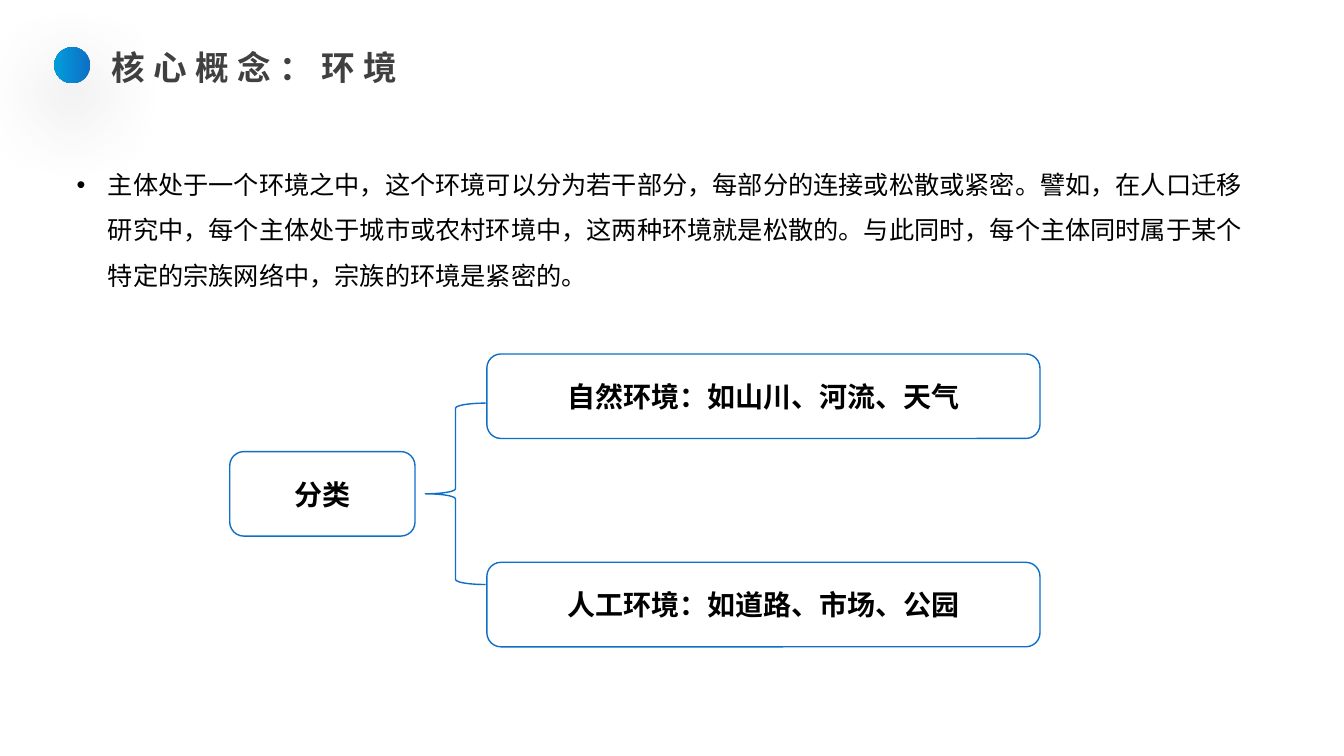
from lxml.etree import SubElement
from pptx import Presentation
from pptx.dml.color import RGBColor
from pptx.enum.shapes import MSO_SHAPE
from pptx.enum.text import MSO_ANCHOR, PP_ALIGN
from pptx.oxml.ns import qn
from pptx.util import Cm, Pt

FONT = "Noto Sans CJK SC"
BLUE = RGBColor(0x0F, 0x6F, 0xC6)
CYAN = RGBColor(0x00, 0x9D, 0xD9)
GREY = RGBColor(0x40, 0x40, 0x40)
BLACK = RGBColor(0, 0, 0)


def write(sp, text, size, color=BLACK, bold=False, align=None, anchor=None, spacing=None):
    """Put one formatted paragraph into a shape; spacing is between letters, in points."""
    tf = sp.text_frame
    tf.word_wrap = True
    tf.vertical_anchor = anchor
    p = tf.paragraphs[0]
    p.alignment = align
    r = p.add_run()
    r.text = text
    r.font.size = Pt(size)
    r.font.bold = bold
    r.font.color.rgb = color
    r.font.name = FONT
    rPr = r.font._element
    SubElement(rPr, qn("a:ea"), typeface=FONT)
    if spacing:
        rPr.set("spc", str(spacing * 100))
    return p


def add_outline(s, kind, left, top, width, height):
    """Add an unfilled shape with a thin blue line; lengths in centimetres."""
    sp = s.shapes.add_shape(kind, Cm(left), Cm(top), Cm(width), Cm(height))
    sp.shadow.inherit = False
    sp.fill.background()
    sp.line.color.rgb = BLUE
    sp.line.width = Pt(1)
    return sp


prs = Presentation()
prs.slide_width, prs.slide_height = Cm(33.87), Cm(19.05)
s = prs.slides.add_slide(prs.slide_layouts[6])

# Title dot with a gradient and a wide soft shadow
dot = s.shapes.add_shape(MSO_SHAPE.OVAL, Cm(1.37), Cm(1.19), Cm(0.91), Cm(0.91))
dot.line.fill.background()
dot.fill.gradient()
dot.fill.gradient_angle = 180
for stop, color, position in zip(dot.fill.gradient_stops, (BLUE, CYAN), (0, 1)):
    stop.color.rgb = color
    stop.position = position
dot.shadow.inherit = False
effects = dot._element.spPr.find(qn("a:effectLst"))
shadow = SubElement(effects, qn("a:outerShdw"), blurRad=str(Pt(60)), dist=str(Pt(20)),
                    dir=str(90 * 60000), algn="t", rotWithShape="0")
shadow_color = SubElement(shadow, qn("a:srgbClr"), val=str(BLACK))
SubElement(shadow_color, qn("a:alpha"), val="40000")

# Bulleted explanation
body = s.shapes.add_textbox(Cm(1.68), Cm(3.76), Cm(30.12), Cm(3.71))
p = write(body, "主体处于一个环境之中，这个环境可以分为若干部分，每部分的连接或松散或紧密。"
                "譬如，在人口迁移研究中，每个主体处于城市或农村环境中，这两种环境就是松散的。"
                "与此同时，每个主体同时属于某个特定的宗族网络中，宗族的环境是紧密的。", 18)
p.line_spacing = 1.5
pPr = p._p.get_or_add_pPr()
pPr.set("marL", str(Cm(0.79)))
pPr.set("indent", str(-Cm(0.79)))
SubElement(pPr, qn("a:buFont"), typeface="Arial")
SubElement(pPr, qn("a:buChar"), char="•")

title = s.shapes.add_textbox(Cm(2.57), Cm(1.07), Cm(15.21), Cm(1.27))
write(title, "核心概念：环境", 24, color=GREY, bold=True, align=PP_ALIGN.JUSTIFY, spacing=6)

# Classification tree
BOXES = [
    ("分类", 5.79, 11.38, 4.67),
    ("自然环境：如山川、河流、天气", 12.27, 8.92, 13.94),
    ("人工环境：如道路、市场、公园", 12.27, 14.17, 13.94),
]
for text, left, top, width in BOXES:
    box = add_outline(s, MSO_SHAPE.ROUNDED_RECTANGLE, left, top, width, 2.13)
    write(box, text, 20, bold=True, align=PP_ALIGN.CENTER, anchor=MSO_ANCHOR.MIDDLE)
add_outline(s, MSO_SHAPE.LEFT_BRACE, 10.72, 10.16, 1.52, 4.57)

prs.save("out.pptx")
